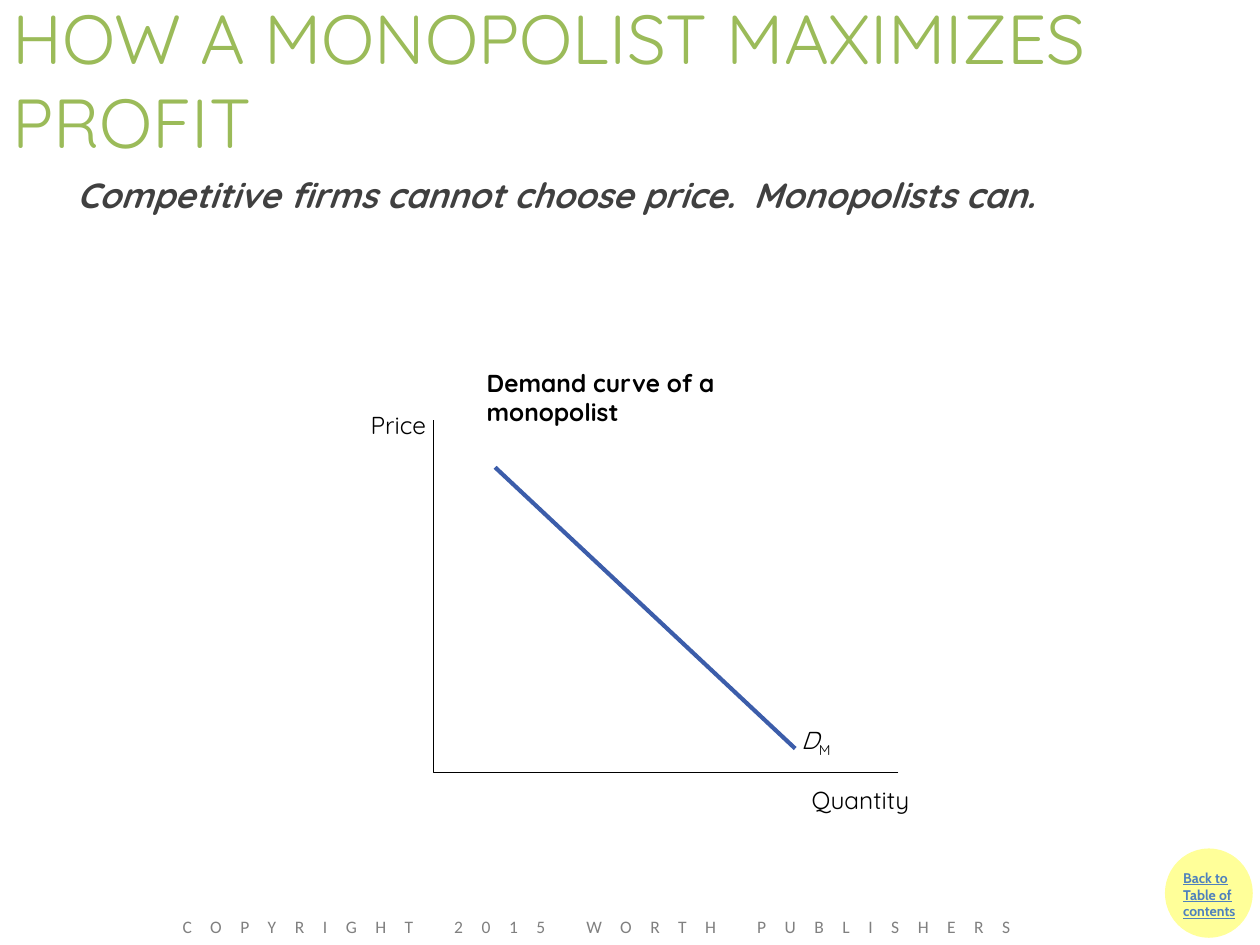
from dataclasses import dataclass

from lxml.etree import SubElement
from pptx import Presentation
from pptx.dml.color import RGBColor
from pptx.enum.shapes import MSO_CONNECTOR, MSO_SHAPE
from pptx.enum.text import MSO_ANCHOR
from pptx.oxml.ns import qn
from pptx.util import Cm, Pt


@dataclass(frozen=True)
class Theme:
    heading_font: str = "Quicksand"
    badge_font: str = "Cabin"
    footer_font: str = "Calibri"
    title: str = "9BBB59"
    statement: str = "404040"
    ink: str = "000000"
    curve: str = "3C5DAA"
    badge: str = "FFFF99"
    link: str = "4F81BD"
    footer: str = "808080"
    title_size: float = 39.6
    statement_size: float = 20
    label_size: float = 14
    footer_size: float = 10
    badge_size: float = 8


THEME = Theme()
LABEL = dict(name=THEME.heading_font, size=THEME.label_size, color=THEME.ink)


def add_run(paragraph, text, font_format, **run_attributes):
    """Add a run; run_attributes are raw values such as spc and baseline."""
    run = paragraph.add_run()
    run.text = text
    for key, value in font_format.items():
        if key == "color":
            run.font.color.rgb = RGBColor.from_string(value)
        else:
            setattr(run.font, key, Pt(value) if key == "size" else value)
    for key, value in run_attributes.items():
        run._r.get_or_add_rPr().set(key, str(value))


def add_text(slide, box, text, font_format, margins=None, wrap=True,
             anchor=MSO_ANCHOR.TOP, **run_attributes):
    """Place text in box (left, top, width, height in cm); return its paragraph."""
    frame = slide.shapes.add_textbox(*map(Cm, box)).text_frame
    frame.word_wrap = wrap
    frame.vertical_anchor = anchor
    if margins is not None:
        for side in ("left", "top", "right", "bottom"):
            setattr(frame, f"margin_{side}", Cm(margins))
    paragraph = frame.paragraphs[0]
    add_run(paragraph, text, font_format, **run_attributes)
    return paragraph


def style_line(line, color, width):
    line.color.rgb = RGBColor.from_string(color)
    line.width = Pt(width)


def add_title(slide, box):
    title_format = dict(name=THEME.heading_font, size=THEME.title_size,
                        color=THEME.title)
    add_text(slide, box, "HOW A MONOPOLIST MAXIMIZES PROFIT", title_format,
             anchor=MSO_ANCHOR.MIDDLE)


def add_statement(slide, box):
    left, top, width, height = box
    statement_format = dict(name=THEME.heading_font, size=THEME.statement_size,
                            color=THEME.statement, bold=True, italic=True)
    sentences = [
        ("Competitive firms cannot choose price.", 0, 19.25),
        ("Monopolists can.", 13.64, width - 13.64),
    ]
    for text, offset, text_width in sentences:
        add_text(slide, (left + offset, top, text_width, height), text,
                 statement_format)


def add_demand_diagram(slide, box):
    left, top, width, height = box

    def place(x, y):
        return left + x, top + y

    def add_label(x, y, label_width, label_height, text, wrap=False, **extra):
        return add_text(slide, (*place(x, y), label_width, label_height), text,
                        LABEL | extra, margins=0, wrap=wrap)

    corner_x, corner_y = 1.27, 8.15
    axis_points = [
        tuple(map(Cm, place(x, y)))
        for x, y in [(width - 0.36, corner_y), (corner_x, corner_y), (corner_x, 1.04)]
    ]
    builder = slide.shapes.build_freeform(*axis_points[0])
    builder.add_line_segments(axis_points[1:], close=False)
    axes = builder.convert_to_shape()
    axes.shadow.inherit = False
    axes.fill.background()
    style_line(axes.line, THEME.ink, 0.5)

    curve = slide.shapes.add_connector(
        MSO_CONNECTOR.STRAIGHT,
        *map(Cm, (*place(8.56, 7.67), *place(2.51, 2.0))))
    SubElement(curve._element.spPr, qn("a:effectLst"))
    style_line(curve.line, THEME.curve, 2.38)

    add_label(2.34, 0, 7.24, 1.19, "Demand curve of a monopolist",
              wrap=True, bold=True)
    add_label(0, 0.84, 1.47, 0.61, "Price", wrap=True)
    add_label(8.89, height - 0.61, 2.11, 0.61, "Quantity")
    curve_label = add_label(8.68, 7.19, 0.74, 0.61, "D", italic=True)
    add_run(curve_label, "M", LABEL, baseline=-25000)


def add_contents_badge(slide, box):
    left, top, width, height = box
    circle = slide.shapes.add_shape(MSO_SHAPE.OVAL, *map(Cm, box))
    circle.shadow.inherit = False
    circle.fill.solid()
    circle.fill.fore_color.rgb = RGBColor.from_string(THEME.badge)
    style_line(circle.line, THEME.badge, 2)
    badge_format = dict(name=THEME.badge_font, size=THEME.badge_size,
                        color=THEME.link, bold=True, underline=True)
    add_text(slide, (left + 0.08, top + 0.26, width + 0.13, height),
             "Back to Table of contents", badge_format)


def add_footer(slide, box):
    footer_format = dict(name=THEME.footer_font, size=THEME.footer_size,
                         color=THEME.footer)
    add_text(slide, box, "COPYRIGHT 2015 WORTH PUBLISHERS", footer_format, spc=1060)


def main():
    presentation = Presentation()
    presentation.slide_width, presentation.slide_height = Cm(25.4), Cm(19.05)
    slide = presentation.slides.add_slide(presentation.slide_layouts[6])
    add_contents_badge(slide, (23.52, 17.14, 1.7, 1.73))
    add_title(slide, (0, 0, 25.4, 3.18))
    add_statement(slide, (1.3, 3.38, 20.5, 1.3))
    add_footer(slide, (3.43, 18.34, 19.71, 0.64))
    add_demand_diagram(slide, (7.47, 7.42, 11, 9.01))
    presentation.save("out.pptx")


if __name__ == "__main__":
    main()
